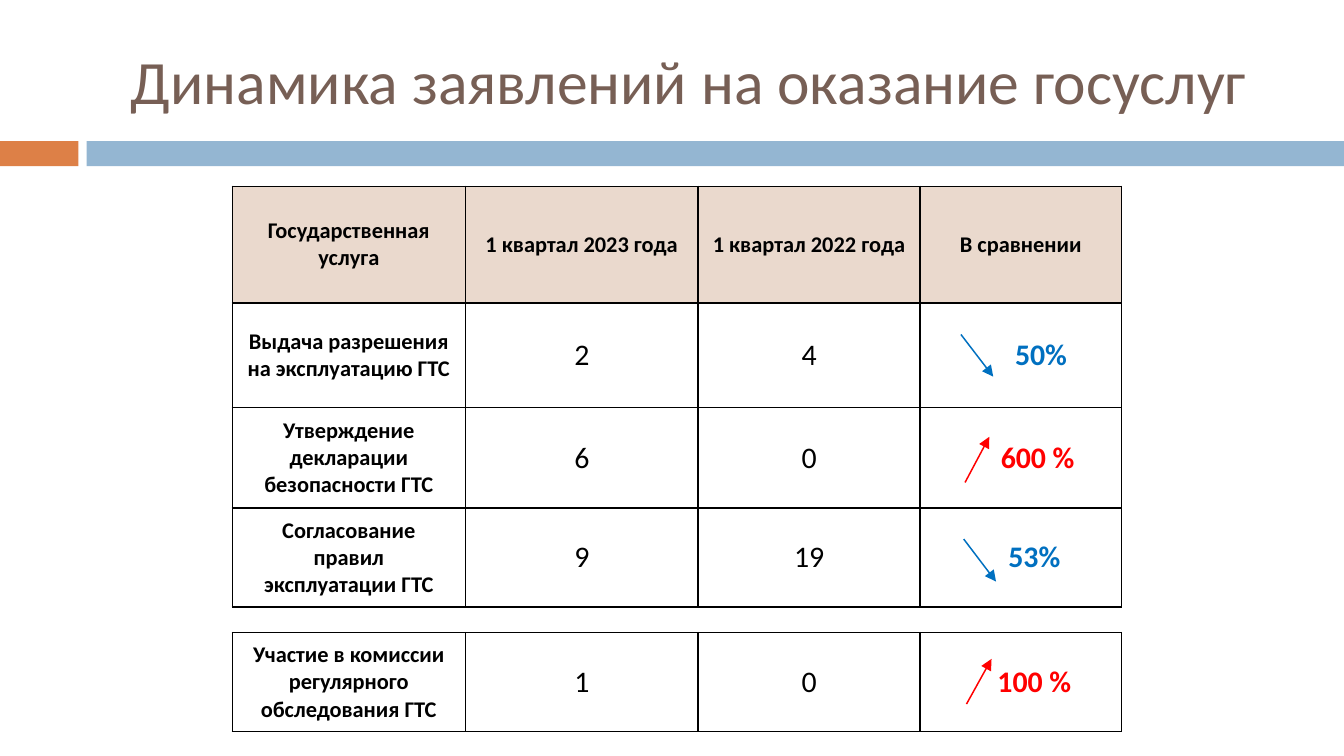
from lxml.etree import SubElement as Sub
from pptx import Presentation
from pptx.dml.color import RGBColor as Rgb
from pptx.enum.shapes import MSO_CONNECTOR as Link, MSO_SHAPE as Shape
from pptx.enum.text import MSO_ANCHOR as Anchor, MSO_AUTO_SIZE as Auto, PP_ALIGN as Align
from pptx.oxml.ns import qn
from pptx.util import Pt

HUES = {
    "title": "775F55",
    "accent": "DD8047",
    "band": "94B6D2",
    "head": "EAD9CD",
    "text": "000000",
    "fall": "0070C0",
    "rise": "FF0000",
}
FONT = "Calibri"
LEFT = 124.5
COLS = [124.8, 124.8, 118.8, 108]
HEAD = ["Государственная услуга", "1 квартал 2023 года", "1 квартал 2022 года", "В сравнении"]
MAIN = [
    ["Выдача разрешения на эксплуатацию ГТС", "2", "4", "50%"],
    ["Утверждение декларации безопасности ГТС", "6", "0", "600 %"],
    ["Согласование правил эксплуатации ГТС", "9", "19", "53%"],
]
LAST = [["Участие в комиссии регулярного обследования ГТС", "1", "0", "100 %"]]
TRENDS = {"50%": ("fall", 21.7), "600 %": ("rise", 18), "53%": ("fall", 14.5), "100 %": ("rise", 14.5)}
ARROWS = [
    ("fall", 514.8, 179.2, 532.1, 201.8),
    ("rise", 517, 258.5, 530, 234),
    ("fall", 516.3, 288.8, 533.6, 311.6),
    ("rise", 517.8, 377.2, 531.2, 353),
]


def rgb(hue):
    return Rgb.from_string(HUES[hue])


def style(frame, size, hue, bold=False):
    for para in frame.paragraphs:
        para.alignment = Align.CENTER
        for run in para.runs:
            run.font.name = FONT
            run.font.size = Pt(size)
            run.font.bold = bold
            run.font.color.rgb = rgb(hue)


def add_title(slide, text):
    title = slide.shapes.title
    title.left, title.top, title.width, title.height = Pt(48), Pt(13.7), Pt(642.5), Pt(58.3)
    frame = title.text_frame
    frame.text = text
    frame.word_wrap = True
    frame.auto_size = Auto.NONE
    frame.vertical_anchor = Anchor.MIDDLE
    style(frame, 33, "title")


def add_bar(slide, left, width, hue):
    bar = slide.shapes.add_shape(Shape.RECTANGLE, Pt(left), Pt(75.6), Pt(width), Pt(13.4))
    bar.shadow.inherit = False
    bar.fill.solid()
    bar.fill.fore_color.rgb = rgb(hue)
    bar.line.fill.background()


def add_edges(cell):
    props = cell._tc.get_or_add_tcPr()
    for side in ("a:lnL", "a:lnR", "a:lnT", "a:lnB"):
        edge = Sub(props, qn(side), w=str(Pt(1)))
        fill = Sub(edge, qn("a:solidFill"))
        Sub(fill, qn("a:srgbClr"), val=HUES["text"])


def fill_cell(cell, text, label, head):
    cell.text = text
    cell.vertical_anchor = Anchor.MIDDLE
    add_edges(cell)
    if head:
        cell.fill.solid()
        cell.fill.fore_color.rgb = rgb("head")
    else:
        cell.fill.background()
    if text in TRENDS:
        hue, shift = TRENDS[text]
        cell.margin_left = Pt(7.2 + shift)
        style(cell.text_frame, 16, hue, True)
    elif head or label:
        style(cell.text_frame, 12, "text", True)
    else:
        style(cell.text_frame, 16, "text")


def add_grid(slide, top, highs, data, head=False):
    frame = slide.shapes.add_table(
        len(data), len(COLS), Pt(LEFT), Pt(top), Pt(sum(COLS)), Pt(sum(highs)))
    table = frame.table
    table.first_row = table.horz_banding = False
    for col, width in zip(table.columns, COLS):
        col.width = Pt(width)
    for i, (row, high, texts) in enumerate(zip(table.rows, highs, data)):
        row.height = Pt(high)
        for j, (cell, text) in enumerate(zip(row.cells, texts)):
            fill_cell(cell, text, j == 0, head and i == 0)


def add_arrow(slide, hue, *ends):
    arrow = slide.shapes.add_connector(Link.STRAIGHT, *map(Pt, ends))
    arrow.line.color.rgb = rgb(hue)
    arrow.line.width = Pt(0.79)
    Sub(arrow.line._get_or_add_ln(), qn("a:tailEnd"), type="triangle")
    Sub(arrow._element.spPr, qn("a:effectLst"))


def main():
    deck = Presentation()
    deck.slide_width, deck.slide_height = Pt(720), Pt(405)
    slide = deck.slides.add_slide(deck.slide_layouts[5])
    add_bar(slide, 0, 42, "accent")
    add_bar(slide, 46.5, 673.5, "band")
    add_title(slide, "Динамика заявлений на оказание госуслуг")
    add_grid(slide, 99.8, [62.5, 56, 54, 53], [HEAD] + MAIN, True)
    add_grid(slide, 338.9, [53], LAST)
    for arrow in ARROWS:
        add_arrow(slide, *arrow)
    deck.save("out.pptx")


if __name__ == "__main__":
    main()
